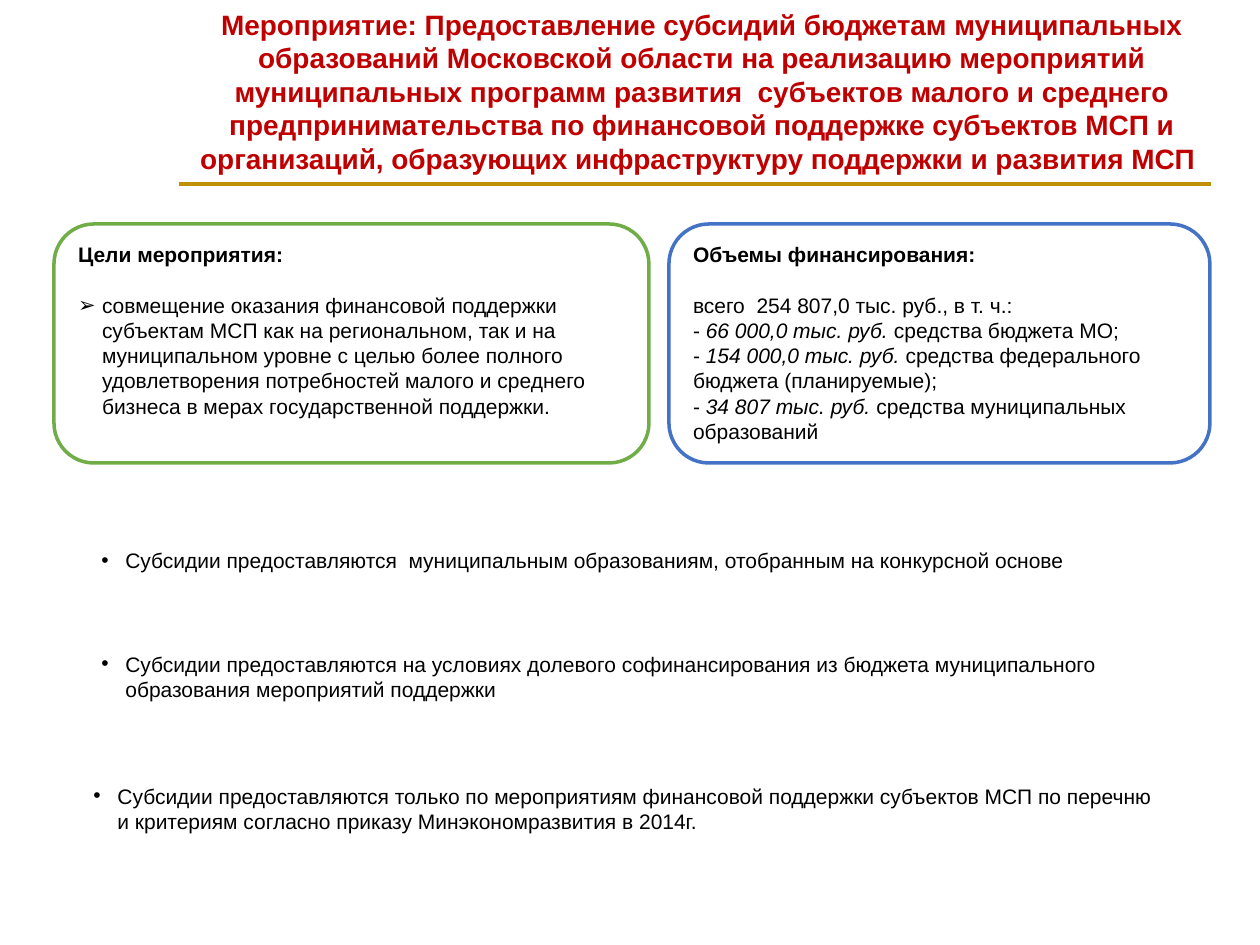
from lxml import etree
from pptx import Presentation
from pptx import util as u
from pptx.dml.color import RGBColor
from pptx.enum import shapes, text
from pptx.oxml.ns import qn

PX = 914400 / 126  # EMU in one px
INDENT = 24
BLACK = "000000"


def px(*vals):
    return [u.Emu(round(v * PX)) for v in vals]


def color(code):
    return RGBColor.from_string(code)


def bullet(para, mark):
    props = para._p.get_or_add_pPr()
    step = px(INDENT)[0]
    props.set("marL", str(step))
    props.set("indent", str(-step))
    font = etree.SubElement(props, qn("a:buFont"))
    font.set("typeface", "Arial")
    etree.SubElement(props, qn("a:buChar")).set("char", mark)


def style(para, size=12, code=BLACK, bold=False, align=text.PP_ALIGN.LEFT):
    para.alignment = align
    for run in para.runs:
        run.font.name = "Arial"
        run.font.size = u.Pt(size)
        run.font.bold = bold
        run.font.color.rgb = color(code)


def label(slide, box, words):
    frame = slide.shapes.add_textbox(*px(*box)).text_frame
    frame.word_wrap = True
    frame.text = words
    return frame.paragraphs[0]


def rule(slide, left, right, y):
    line = slide.shapes.add_connector(
        shapes.MSO_CONNECTOR.STRAIGHT, *px(left, y, right, y))
    line.line.color.rgb = color("BF9000")
    line.line.width = u.Pt(2)
    etree.SubElement(line._element.spPr, qn("a:effectLst"))


def panel(slide, box, edge, head):
    shape = slide.shapes.add_shape(
        shapes.MSO_SHAPE.ROUNDED_RECTANGLE, *px(*box))
    shape.shadow.inherit = False
    shape.fill.solid()
    shape.fill.fore_color.rgb = color("FFFFFF")
    shape.line.color.rgb = color(edge)
    shape.line.width = u.Pt(2)
    frame = shape.text_frame
    frame.word_wrap = True
    frame.vertical_anchor = text.MSO_ANCHOR.TOP
    frame.text = head
    style(frame.paragraphs[0], bold=True)
    first = frame.add_paragraph()
    first.space_before = u.Pt(14.4)
    return frame, first


def main():
    prs = Presentation()
    prs.slide_width, prs.slide_height = px(1260, 945)
    slide = prs.slides.add_slide(prs.slide_layouts[6])

    # Title and its rule
    rule(slide, 179, 1211, 184)
    title = label(
        slide, (179, 1, 1046, 183),
        "Мероприятие: Предоставление субсидий бюджетам муниципальных "
        "образований Московской области на реализацию мероприятий "
        "муниципальных программ развития  субъектов малого и среднего "
        "предпринимательства по финансовой поддержке субъектов МСП и "
        "организаций, образующих инфраструктуру поддержки и развития МСП ")
    style(title, 16, "C00000", True, text.PP_ALIGN.CENTER)

    # Goals
    frame, goal = panel(slide, (54, 224, 595, 239), "70AD47",
                        "Цели мероприятия:")
    goal.text = (
        "совмещение оказания финансовой поддержки субъектам МСП как на "
        "региональном, так и на муниципальном уровне с целью более полного "
        "удовлетворения потребностей малого и среднего бизнеса в мерах "
        "государственной поддержки.")
    bullet(goal, "➢")
    style(goal)

    # Funding
    frame, total = panel(slide, (669, 224, 541, 239), "4472C4",
                         "Объемы финансирования:")
    total.text = "всего  254 807,0 тыс. руб., в т. ч.:"
    style(total)
    for amount, source in (
            ("66 000,0 тыс. руб.", "средства бюджета МО;"),
            ("154 000,0 тыс. руб.",
             "средства федерального бюджета (планируемые);"),
            ("34 807 тыс. руб.", "средства муниципальных образований")):
        para = frame.add_paragraph()
        for part in ("- ", amount, " " + source):
            run = para.add_run()
            run.text = part
            run.font.italic = part == amount
        style(para)

    # Conditions
    for box, words in (
            ((89, 541, 1121, 38),
             "Субсидии предоставляются  муниципальным образованиям, "
             "отобранным на конкурсной основе"),
            ((89, 645, 1081, 63),
             "Субсидии предоставляются на условиях долевого "
             "софинансирования из бюджета муниципального образования "
             "мероприятий поддержки"),
            ((81, 777, 1105, 63),
             "Субсидии предоставляются только по мероприятиям финансовой "
             "поддержки субъектов МСП по перечню \vи критериям согласно "
             "приказу Минэкономразвития в 2014г.")):
        para = label(slide, box, words)
        bullet(para, "•")
        style(para)

    prs.save("out.pptx")


if __name__ == "__main__":
    main()
